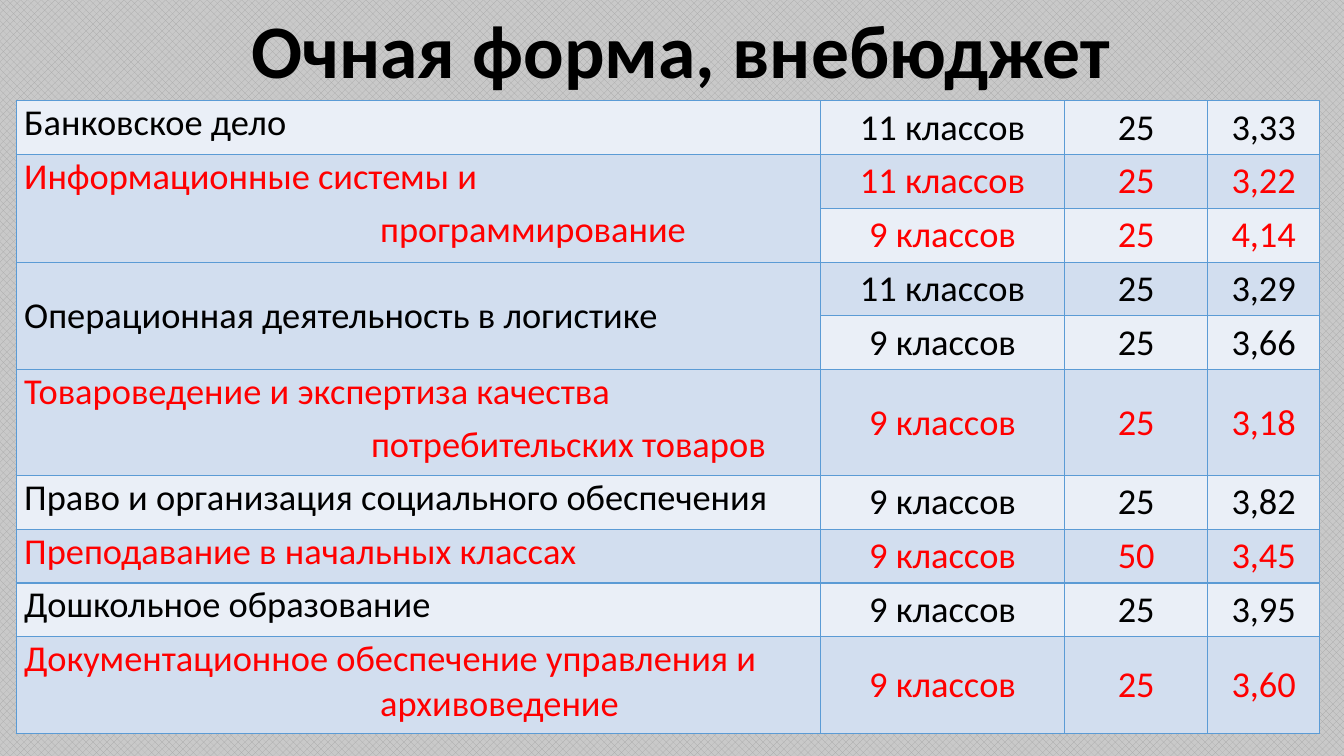
"""Build the slide with the table of paid full-time programmes."""
from dataclasses import dataclass

from lxml import etree
from pptx import Presentation
from pptx.dml.color import RGBColor
from pptx.enum.dml import MSO_PATTERN
from pptx.enum.text import MSO_ANCHOR, MSO_AUTO_SIZE, PP_ALIGN
from pptx.oxml.ns import qn
from pptx.util import Inches, Pt

CENTER = PP_ALIGN.CENTER
LEFT = PP_ALIGN.LEFT
TOP = MSO_ANCHOR.TOP
MIDDLE = MSO_ANCHOR.MIDDLE
GROW = MSO_AUTO_SIZE.SHAPE_TO_FIT_TEXT
DOTS = MSO_PATTERN.PERCENT_50

BLACK = RGBColor(0x00, 0x00, 0x00)
RED = RGBColor(0xFF, 0x00, 0x00)
LIGHT_BAND = RGBColor(0xEA, 0xEF, 0xF7)
DARK_BAND = RGBColor(0xD2, 0xDE, 0xEF)
BORDER = RGBColor(0x5B, 0x9B, 0xD5)
BACKDROP_DOTS = RGBColor(0xA6, 0xA6, 0xA6)
BACKDROP = RGBColor(0xC9, 0xC9, 0xC9)

FONT = "Calibri"
COLUMN_WIDTHS = (7.98, 2.42, 1.42, 1.11)
TABLE_HEIGHT = 6.28
TALL_ROWS = {5: 1.05, 9: 0.96}


@dataclass(frozen=True)
class Line:
    text: str
    margin: float = 0
    indent: float = 0


@dataclass(frozen=True)
class Programme:
    name: tuple[Line, ...]
    intakes: tuple[tuple[str, str, str], ...]
    anchor: MSO_ANCHOR = TOP


GRADE_9 = "9 классов"
GRADE_11 = "11 классов"
PROGRAMMES = (
    Programme((Line("Банковское дело"),), ((GRADE_11, "25", "3,33"),)),
    Programme(
        (Line("Информационные системы и"), Line("программирование", indent=3.53)),
        ((GRADE_11, "25", "3,22"), (GRADE_9, "25", "4,14")),
    ),
    Programme(
        (Line("Операционная деятельность в логистике"),),
        ((GRADE_11, "25", "3,29"), (GRADE_9, "25", "3,66")),
        MIDDLE,
    ),
    Programme(
        (Line("Товароведение и экспертиза качества"),
         Line("потребительских товаров", indent=3.44)),
        ((GRADE_9, "25", "3,18"),),
    ),
    Programme((Line("Право и организация социального обеспечения"),),
              ((GRADE_9, "25", "3,82"),)),
    Programme((Line("Преподавание в начальных классах"),), ((GRADE_9, "50", "3,45"),)),
    Programme((Line("Дошкольное образование"),), ((GRADE_9, "25", "3,95"),)),
    Programme(
        (Line("Документационное обеспечение управления и архивоведение", 3.53, -3.53),),
        ((GRADE_9, "25", "3,60"),),
    ),
)


def format_font(font, size: float, color: RGBColor, bold: bool = False) -> None:
    """Apply the slide's typeface with the given size and colour."""
    font.name = FONT
    font.size = Pt(size)
    font.color.rgb = color
    font.bold = bold


def style_cell(cell, band: RGBColor) -> None:
    """Set the margins, fill and four borders of a cell."""
    cell.margin_left = cell.margin_right = Inches(0.08)
    cell.margin_top = cell.margin_bottom = 0
    cell.fill.solid()
    cell.fill.fore_color.rgb = band
    properties = cell._tc.get_or_add_tcPr()
    for position, side in enumerate(("a:lnL", "a:lnR", "a:lnT", "a:lnB")):
        edge = etree.Element(qn(side), w=str(Pt(1)))
        fill = etree.SubElement(edge, qn("a:solidFill"))
        etree.SubElement(fill, qn("a:srgbClr"), val=str(BORDER))
        properties.insert(position, edge)


def write_cell(cell, lines: tuple[Line, ...], color: RGBColor,
               align: PP_ALIGN, anchor: MSO_ANCHOR) -> None:
    """Fill a cell with one paragraph per line."""
    cell.vertical_anchor = anchor
    cell.text_frame.text = "\n".join(line.text for line in lines)
    for paragraph, line in zip(cell.text_frame.paragraphs, lines):
        paragraph.alignment = align
        paragraph.space_before = paragraph.space_after = Pt(3)
        if line.margin or line.indent:
            properties = paragraph._p.get_or_add_pPr()
            properties.set("marL", str(Inches(line.margin)))
            properties.set("indent", str(Inches(line.indent)))
        format_font(paragraph.runs[0].font, 26, color)


def add_title(slide) -> None:
    """Place and format the slide title."""
    title = slide.shapes.title
    title.left, title.top = Inches(0.73), Inches(-0.03)
    title.width, title.height = Inches(12.05), Inches(1.01)
    frame = title.text_frame
    frame.text = "Очная форма, внебюджет"
    frame.word_wrap = True
    frame.auto_size = GROW
    frame.vertical_anchor = MIDDLE
    frame.paragraphs[0].alignment = CENTER
    format_font(frame.paragraphs[0].runs[0].font, 54, BLACK, bold=True)


def add_programmes(slide) -> None:
    """Draw the table, one programme after another."""
    row_count = sum(len(programme.intakes) for programme in PROGRAMMES)
    table = slide.shapes.add_table(
        row_count, len(COLUMN_WIDTHS), Inches(0.16), Inches(1),
        Inches(sum(COLUMN_WIDTHS)), Inches(TABLE_HEIGHT),
    ).table
    table.first_row = table.horz_banding = False
    for column, width in zip(table.columns, COLUMN_WIDTHS):
        column.width = Inches(width)

    plain_height = (TABLE_HEIGHT - sum(TALL_ROWS.values())) / (row_count - len(TALL_ROWS))
    for index, row in enumerate(table.rows):
        row.height = Inches(TALL_ROWS.get(index, plain_height))
        for cell in row.cells:
            style_cell(cell, DARK_BAND if index % 2 else LIGHT_BAND)

    first = 0
    for number, programme in enumerate(PROGRAMMES):
        color = RED if number % 2 else BLACK
        last = first + len(programme.intakes) - 1
        name_cell = table.cell(first, 0)
        if last > first:
            name_cell.merge(table.cell(last, 0))
        write_cell(name_cell, programme.name, color, LEFT, programme.anchor)
        for row_index, intake in enumerate(programme.intakes, first):
            for column_index, value in enumerate(intake, 1):
                write_cell(table.cell(row_index, column_index), (Line(value),),
                           color, CENTER, MIDDLE)
        first = last + 1


def main() -> None:
    """Create and save the presentation."""
    presentation = Presentation()
    presentation.slide_width = Inches(13.33)
    presentation.slide_height = Inches(7.5)
    slide = presentation.slides.add_slide(presentation.slide_layouts.get_by_name("Title Only"))
    backdrop = slide.background.fill
    backdrop.patterned()
    backdrop.pattern = DOTS
    backdrop.fore_color.rgb = BACKDROP_DOTS
    backdrop.back_color.rgb = BACKDROP
    add_title(slide)
    add_programmes(slide)
    presentation.save("out.pptx")


if __name__ == "__main__":
    main()
